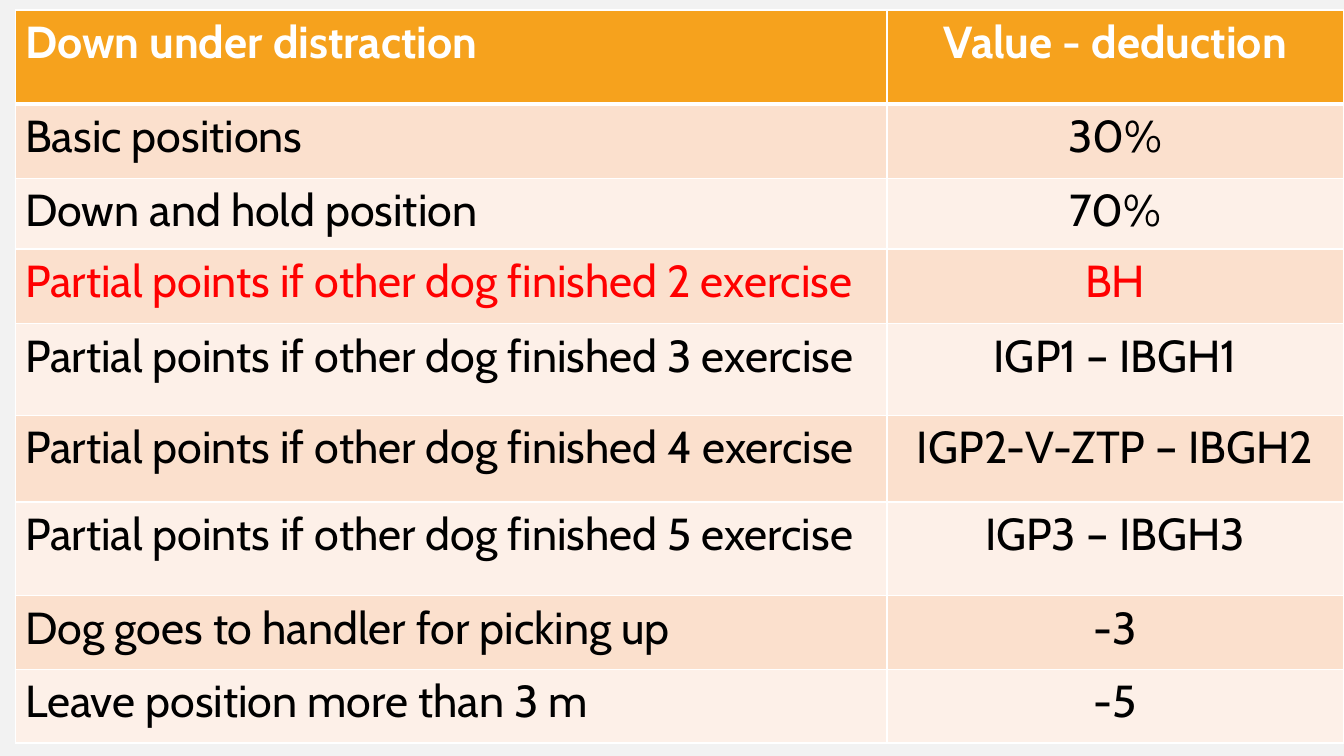
from lxml.etree import SubElement
from pptx import Presentation
from pptx.dml.color import RGBColor
from pptx.enum.text import PP_ALIGN
from pptx.oxml.ns import qn
from pptx.util import Pt

ROWS = [
    ("Down under distraction", "Value - deduction", 67),
    ("Basic positions", "30%", 53.3),
    ("Down and hold position", "70%", 50.4),
    ("Partial points if other dog finished 2 exercise", "BH", 53.3),
    ("Partial points if other dog finished 3 exercise", "IGP1 – IBGH1", 65.5),
    ("Partial points if other dog finished 4 exercise", "IGP2-V-ZTP – IBGH2", 61.9),
    ("Partial points if other dog finished 5 exercise", "IGP3 – IBGH3", 67),
    ("Dog goes to handler for picking up", "-3", 52.6),
    ("Leave position more than 3 m", "-5", 52.6),
]
RED_ROW = 3
COLS = (622.8, 326.2)
LEFT, TOP = 10.8, 7.2
ALIGN = (PP_ALIGN.LEFT, PP_ALIGN.CENTER)
THEME = {
    "back": "F2F2F2", "head": "F6A21D", "bands": ("FDF0E8", "FBE0CD"),
    "line": "FFFFFF", "title": "FFFFFF", "body": "000000", "alert": "FF0000",
    "font": "Cabin", "size": 32, "thin": 1, "thick": 3,
}


def paint(fill, color):
    fill.solid()
    fill.fore_color.rgb = RGBColor.from_string(color)


def border(cell, row):
    props = cell._tc.get_or_add_tcPr()
    heavy = {(0, "B"), (1, "T")}
    for side in "LRTB":
        width = THEME["thick" if (row, side) in heavy else "thin"]
        line = SubElement(props, qn("a:ln" + side), w=str(Pt(width)))
        fill = SubElement(line, qn("a:solidFill"))
        SubElement(fill, qn("a:srgbClr"), val=THEME["line"])


def style(cell, text, row, align):
    border(cell, row)
    paint(cell.fill, THEME["bands"][row % 2] if row else THEME["head"])
    para = cell.text_frame.paragraphs[0]
    para.alignment = align
    run = para.add_run()
    run.text = text
    form = {"name": THEME["font"], "size": Pt(THEME["size"]), "bold": row == 0}
    for key, value in form.items():
        setattr(run.font, key, value)
    tone = {0: "title", RED_ROW: "alert"}.get(row, "body")
    run.font.color.rgb = RGBColor.from_string(THEME[tone])


def main():
    deck = Presentation()
    deck.slide_width, deck.slide_height = Pt(960), Pt(540)
    slide = deck.slides.add_slide(deck.slide_layouts[6])
    paint(slide.background.fill, THEME["back"])
    high = sum(row[-1] for row in ROWS)
    table = slide.shapes.add_table(
        len(ROWS), len(COLS), Pt(LEFT), Pt(TOP), Pt(sum(COLS)), Pt(high)
    ).table
    for col, width in zip(table.columns, COLS):
        col.width = Pt(width)
    for r, (*texts, height) in enumerate(ROWS):
        table.rows[r].height = Pt(height)
        for c, text in enumerate(texts):
            style(table.cell(r, c), text, r, ALIGN[c])
    deck.save("out.pptx")


if __name__ == "__main__":
    main()
